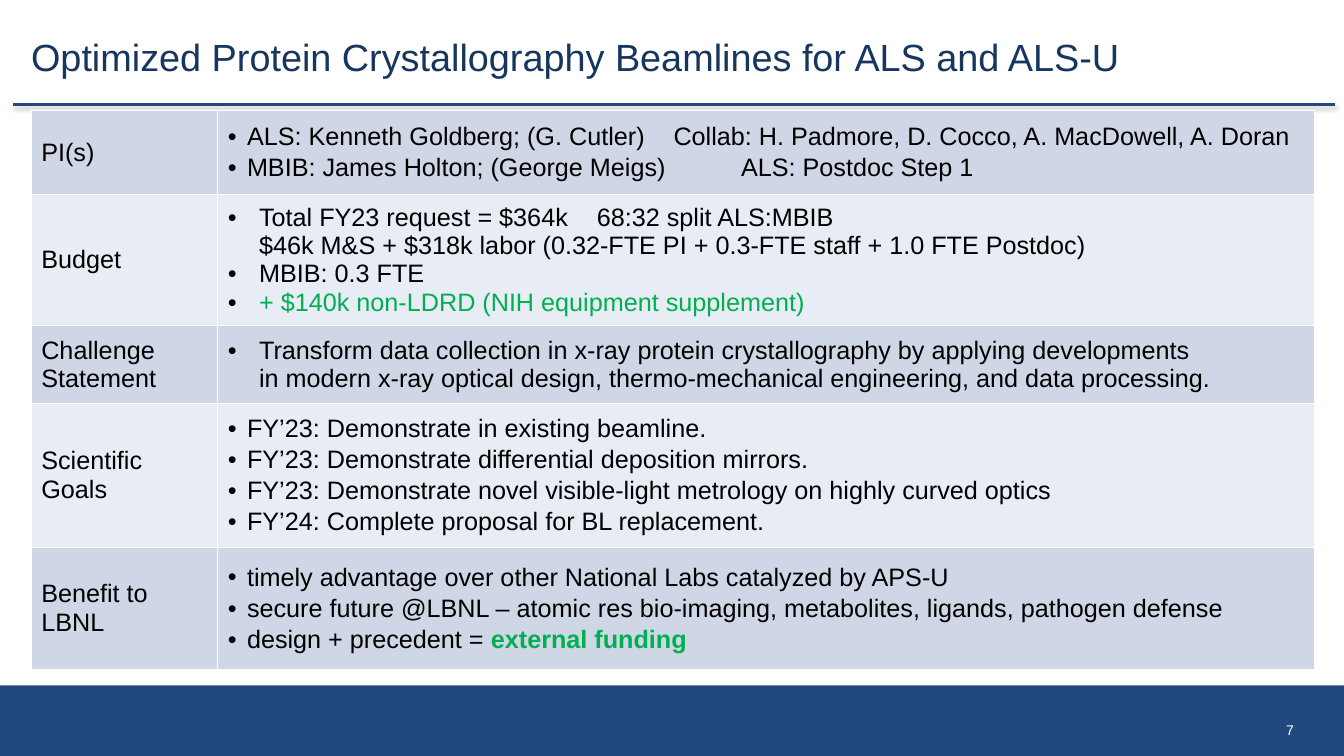
from lxml import etree
from pptx import Presentation
from pptx.dml.color import RGBColor
from pptx.enum.shapes import MSO_CONNECTOR, MSO_SHAPE
from pptx.enum.text import MSO_ANCHOR, PP_ALIGN
from pptx.oxml.ns import qn
from pptx.util import Inches, Pt

RECTANGLE = MSO_SHAPE.RECTANGLE
STRAIGHT = MSO_CONNECTOR.STRAIGHT
MIDDLE = MSO_ANCHOR.MIDDLE
LEFT, RIGHT = PP_ALIGN.LEFT, PP_ALIGN.RIGHT

BLACK = RGBColor(0x00, 0x00, 0x00)
WHITE = RGBColor(0xFF, 0xFF, 0xFF)
GREEN = RGBColor(0x00, 0xB0, 0x50)
TITLE_NAVY = RGBColor(0x17, 0x36, 0x5D)
RULE_BLUE = RGBColor(0x27, 0x45, 0x7C)
FOOTER_BLUE = RGBColor(0x1F, 0x49, 0x7D)
BANDS = [RGBColor(0xCF, 0xD7, 0xE7), RGBColor(0xE8, 0xEC, 0xF4)]

FONT = "Arial"
BODY = {"name": FONT, "size": Pt(18), "color": BLACK}
ACCENT = BODY | {"color": GREEN}
STRONG = ACCENT | {"bold": True}
TITLE = {"name": FONT, "size": Pt(27), "color": TITLE_NAVY}
NUMBER = {"name": FONT, "size": Pt(10), "color": WHITE}

SLIDE_WIDTH, SLIDE_HEIGHT = 13.33, 7.5
TABLE_LEFT, TABLE_TOP = 0.31, 1.1
COLUMNS = [1.85, 10.88]
NARROW, WIDE = {"indent": 0.19, "before": 2}, {"indent": 0.31, "before": 0}

HEADING = "Optimized Protein Crystallography Beamlines for ALS and ALS-U"
ROWS = [
    ("PI(s)", 0.83, NARROW, [
        {"runs": [("ALS: Kenneth Goldberg; (G. Cutler)\tCollab: H. Padmore, D. Cocco, "
                   "A. MacDowell, A. Doran", BODY)], "tab": 4.42},
        {"runs": [("MBIB: James Holton; (George Meigs)\tALS: Postdoc Step 1", BODY)],
         "tab": 5.09},
    ]),
    ("Budget", 1.22, WIDE, [
        {"runs": [("Total FY23 request = $364k\t68:32 split ALS:MBIB\n"
                   "$46k M&S + $318k labor (0.32-FTE PI + 0.3-FTE staff + 1.0 FTE Postdoc)",
                   BODY)], "tab": 3.66},
        {"runs": [("MBIB: 0.3 FTE", BODY)]},
        {"runs": [("+ $140k non-LDRD (NIH equipment supplement)", ACCENT)]},
    ]),
    ("Challenge Statement", 0.77, WIDE, [
        {"runs": [("Transform data collection in x-ray protein crystallography by applying "
                   "developments\nin modern x-ray optical design, thermo-mechanical "
                   "engineering, and data processing.", BODY)]},
    ]),
    ("Scientific Goals", 1.43, NARROW, [
        {"runs": [("FY’23: Demonstrate in existing beamline.", BODY)]},
        {"runs": [("FY’23: Demonstrate differential deposition mirrors.", BODY)]},
        {"runs": [("FY’23: Demonstrate novel visible-light metrology on highly curved optics",
                   BODY)]},
        {"runs": [("FY’24: Complete proposal for BL replacement.", BODY)]},
    ]),
    ("Benefit to LBNL", 1.21, NARROW, [
        {"runs": [("timely advantage over other National Labs catalyzed by APS-U", BODY)]},
        {"runs": [("secure future @LBNL – atomic res bio-imaging, metabolites, ligands, "
                   "pathogen defense", BODY)]},
        {"runs": [("design + precedent = ", BODY), ("external funding", STRONG)]},
    ]),
]


def add_child(parent, tag, **attributes):
    child = etree.SubElement(parent, qn(tag))
    for name, value in attributes.items():
        child.set(name, str(value))
    return child


def add_span(para, text, style):
    for index, line in enumerate(text.split("\n")):
        if index:
            para.add_line_break()
        span = para.add_run()
        span.text = line
        for name, value in style.items():
            if name == "color":
                span.font.color.rgb = value
            else:
                setattr(span.font, name, value)


def add_text(page, place, text, style, align):
    box = page.shapes.add_textbox(*map(Inches, place))
    frame = box.text_frame
    frame.word_wrap = True
    frame.vertical_anchor = MIDDLE
    para = frame.paragraphs[0]
    para.alignment = align
    add_span(para, text, style)


def add_bullet(para, item, layout, first):
    properties = para._p.get_or_add_pPr()
    indent = Inches(layout["indent"])
    properties.set("marL", str(indent))
    properties.set("indent", str(-indent))
    add_child(add_child(properties, "a:buClr"), "a:srgbClr", val=BLACK)
    add_child(properties, "a:buFont", typeface=FONT)
    add_child(properties, "a:buChar", char="•")
    if "tab" in item:
        stops = add_child(properties, "a:tabLst")
        add_child(stops, "a:tab", pos=Inches(item["tab"]), algn="l")
    para.space_before = Pt(0 if first else layout["before"])
    for text, style in item["runs"]:
        add_span(para, text, style)


def format_cell(cell, color):
    properties = cell._tc.get_or_add_tcPr()
    for side in ("a:lnL", "a:lnR", "a:lnT", "a:lnB"):
        border = add_child(properties, side, w=Pt(1))
        add_child(add_child(border, "a:solidFill"), "a:srgbClr", val=WHITE)
    cell.fill.solid()
    cell.fill.fore_color.rgb = color
    cell.vertical_anchor = MIDDLE


def add_summary(page):
    heights = [row[1] for row in ROWS]
    place = (TABLE_LEFT, TABLE_TOP, sum(COLUMNS), sum(heights))
    table = page.shapes.add_table(len(ROWS), len(COLUMNS), *map(Inches, place)).table
    table.first_row = table.horz_banding = False
    for column, width in zip(table.columns, COLUMNS):
        column.width = Inches(width)
    for index, (label, height, layout, items) in enumerate(ROWS):
        table.rows[index].height = Inches(height)
        head, body = table.cell(index, 0), table.cell(index, 1)
        for cell in (head, body):
            format_cell(cell, BANDS[index % len(BANDS)])
        add_span(head.text_frame.paragraphs[0], label, BODY)
        frame = body.text_frame
        for order, item in enumerate(items):
            para = frame.add_paragraph() if order else frame.paragraphs[0]
            add_bullet(para, item, layout, order == 0)


def add_rule(page):
    rule = page.shapes.add_connector(STRAIGHT, *map(Inches, (0.13, 1.04, 13.24, 1.04)))
    rule.line.color.rgb = RULE_BLUE
    rule.line.width = Pt(2)
    effects = add_child(rule._element.spPr, "a:effectLst")
    shadow = add_child(effects, "a:outerShdw", blurRad=Pt(3.1), dist=Pt(1.6),
                       dir=90 * 60000, rotWithShape=0)
    add_child(add_child(shadow, "a:srgbClr", val=BLACK), "a:alpha", val=37000)


def add_footer(page):
    bar = page.shapes.add_shape(RECTANGLE, *map(Inches, (-0.02, 6.8, 13.42, 0.73)))
    bar.shadow.inherit = False
    bar.fill.solid()
    bar.fill.fore_color.rgb = FOOTER_BLUE
    bar.line.fill.background()


def main():
    """Build the beamline project summary slide."""
    deck = Presentation()
    deck.slide_width, deck.slide_height = Inches(SLIDE_WIDTH), Inches(SLIDE_HEIGHT)
    page = deck.slides.add_slide(deck.slide_layouts[6])
    add_footer(page)
    add_rule(page)
    add_text(page, (0.21, 0.16, 11.41, 0.8), HEADING, TITLE, LEFT)
    add_summary(page)
    add_text(page, (12.24, 7.04, 0.69, 0.4), "7", NUMBER, RIGHT)
    deck.save("out.pptx")


if __name__ == "__main__":
    main()
